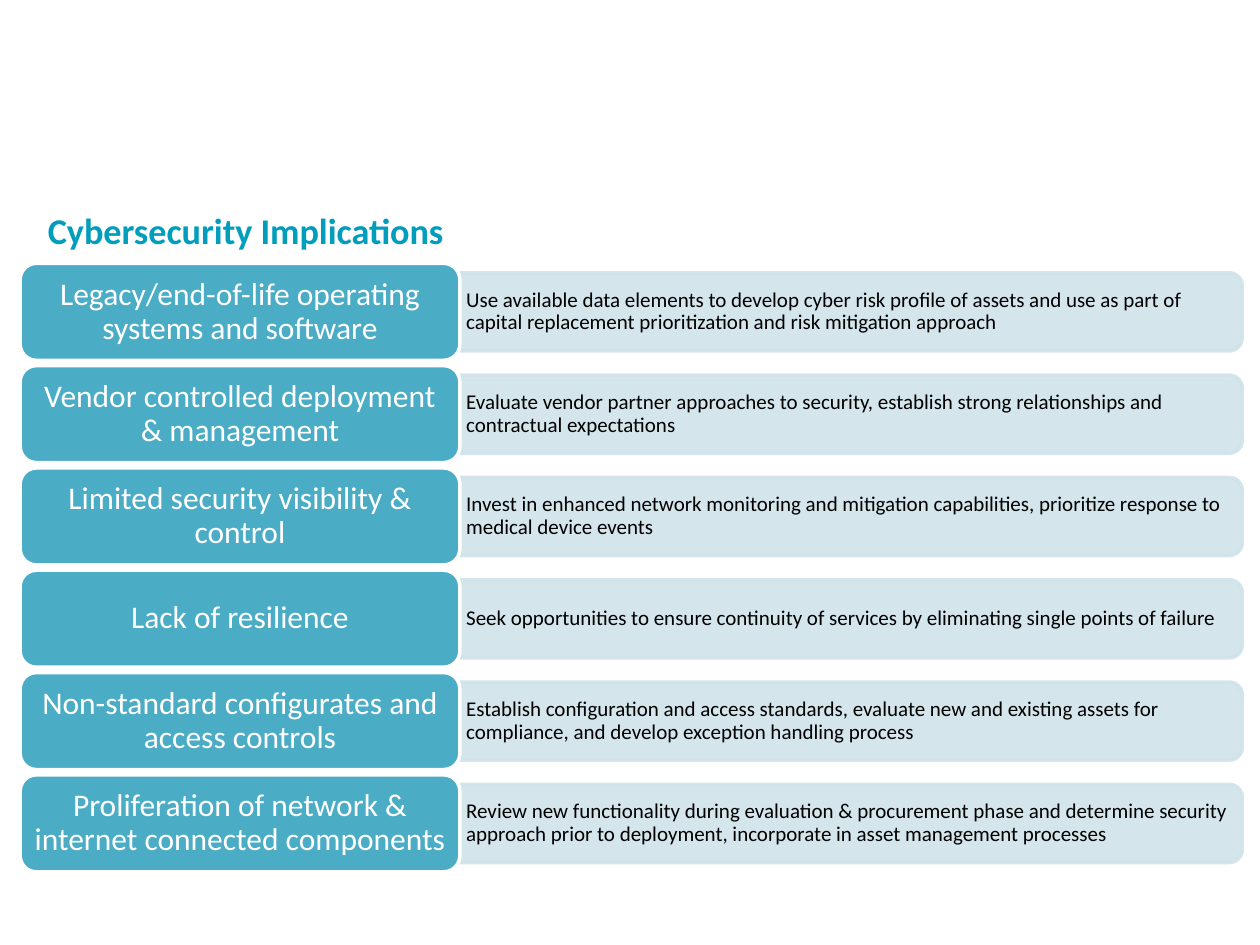
"""Build a slide pairing cybersecurity implications with recommended responses."""
from lxml import etree
from pptx import Presentation
from pptx.dml.color import RGBColor
from pptx.enum.shapes import MSO_SHAPE
from pptx.enum.text import MSO_ANCHOR, MSO_AUTO_SIZE, PP_ALIGN
from pptx.oxml.ns import qn
from pptx.util import Inches, Pt

ROUNDED = MSO_SHAPE.ROUNDED_RECTANGLE
ROUNDED_TOP = MSO_SHAPE.ROUND_2_SAME_RECTANGLE
MIDDLE = MSO_ANCHOR.MIDDLE
LEFT, CENTER = PP_ALIGN.LEFT, PP_ALIGN.CENTER

TITLE_BLUE = RGBColor(0x00, 0x9D, 0xBD)
LABEL_BLUE = RGBColor(0x4B, 0xAC, 0xC6)
PANEL_BLUE = RGBColor(0xD0, 0xE3, 0xEA)
WHITE = RGBColor(0xFF, 0xFF, 0xFF)
BLACK = RGBColor(0x00, 0x00, 0x00)

LABEL_LEFT, LABEL_WIDTH, LABEL_HEIGHT = 0.16, 3.49, 0.77
PANEL_LEFT, PANEL_WIDTH, PANEL_HEIGHT = LABEL_LEFT + LABEL_WIDTH, 6.21, 0.62
RESPONSE_WIDTH, RESPONSE_HEIGHT = 6.18, 0.56
FIRST_ROW, LAST_ROW = 2.09, 6.15

ROWS = [
    ("Legacy/end-of-life operating systems and software",
     "Use available data elements to develop cyber risk profile of assets and use as part of "
     "capital replacement prioritization and risk mitigation approach"),
    ("Vendor controlled deployment & management",
     "Evaluate vendor partner approaches to security, establish strong relationships and "
     "contractual expectations"),
    ("Limited security visibility & control",
     "Invest in enhanced network monitoring and mitigation capabilities, prioritize response to "
     "medical device events"),
    ("Lack of resilience",
     "Seek opportunities to ensure continuity of services by eliminating single points of failure"),
    ("Non-standard configurates and access controls",
     "Establish configuration and access standards, evaluate new and existing assets for "
     "compliance, and develop exception handling process"),
    ("Proliferation of network & internet connected components",
     "Review new functionality during evaluation & procurement phase and determine security "
     "approach prior to deployment, incorporate in asset management processes"),
]
ROW_PITCH = (LAST_ROW - FIRST_ROW) / (len(ROWS) - 1)


def paint(shape, fill_color, line_color):
    shape.shadow.inherit = False
    shape.fill.solid()
    shape.fill.fore_color.rgb = fill_color
    shape.line.color.rgb = line_color
    shape.line.width = Pt(2)


def write(shape, text, size, color, alignment, side_margin, edge_margin):
    frame = shape.text_frame
    frame.word_wrap = True
    frame.vertical_anchor = MIDDLE
    frame.margin_left = frame.margin_right = Inches(side_margin)
    frame.margin_top = frame.margin_bottom = Inches(edge_margin)
    frame.text = text
    paragraph = frame.paragraphs[0]
    paragraph.alignment = alignment
    paragraph.line_spacing = 0.9
    paragraph.font.name = "Calibri"
    paragraph.font.size = Pt(size)
    paragraph.font.color.rgb = color


presentation = Presentation()
presentation.slide_width, presentation.slide_height = Inches(10), Inches(7.5)
slide = presentation.slides.add_slide(presentation.slide_layouts[5])

title = slide.shapes.title
title.left, title.top = Inches(0.28), Inches(1.61)
title.width, title.height = Inches(9), Inches(0.43)
write(title, "Cybersecurity Implications", 20.7, TITLE_BLUE, LEFT, 0.1, 0.05)
title.text_frame.auto_size = MSO_AUTO_SIZE.NONE
title.text_frame.paragraphs[0].line_spacing = 1.0
title.text_frame.paragraphs[0].font.bold = True

group = slide.shapes.add_group_shape()
for row, (implication, response) in enumerate(ROWS):
    top = FIRST_ROW + row * ROW_PITCH
    middle = top + LABEL_HEIGHT / 2

    panel = group.shapes.add_shape(
        ROUNDED_TOP,
        Inches(PANEL_LEFT + (PANEL_WIDTH - PANEL_HEIGHT) / 2), Inches(middle - PANEL_WIDTH / 2),
        Inches(PANEL_HEIGHT), Inches(PANEL_WIDTH))
    panel.rotation = 90
    paint(panel, PANEL_BLUE, PANEL_BLUE)
    for color in panel.fill._xPr.iter(qn("a:srgbClr")):
        etree.SubElement(color, qn("a:alpha"), val="90000")

    response_box = group.shapes.add_textbox(
        Inches(PANEL_LEFT), Inches(middle - RESPONSE_HEIGHT / 2),
        Inches(RESPONSE_WIDTH), Inches(RESPONSE_HEIGHT))
    write(response_box, response, 12, BLACK, LEFT, 0.05, 0.03)

    label = group.shapes.add_shape(
        ROUNDED, Inches(LABEL_LEFT), Inches(top), Inches(LABEL_WIDTH), Inches(LABEL_HEIGHT))
    paint(label, LABEL_BLUE, WHITE)
    write(label, implication, 18, WHITE, CENTER, 0.07, 0.04)

presentation.save("out.pptx")
